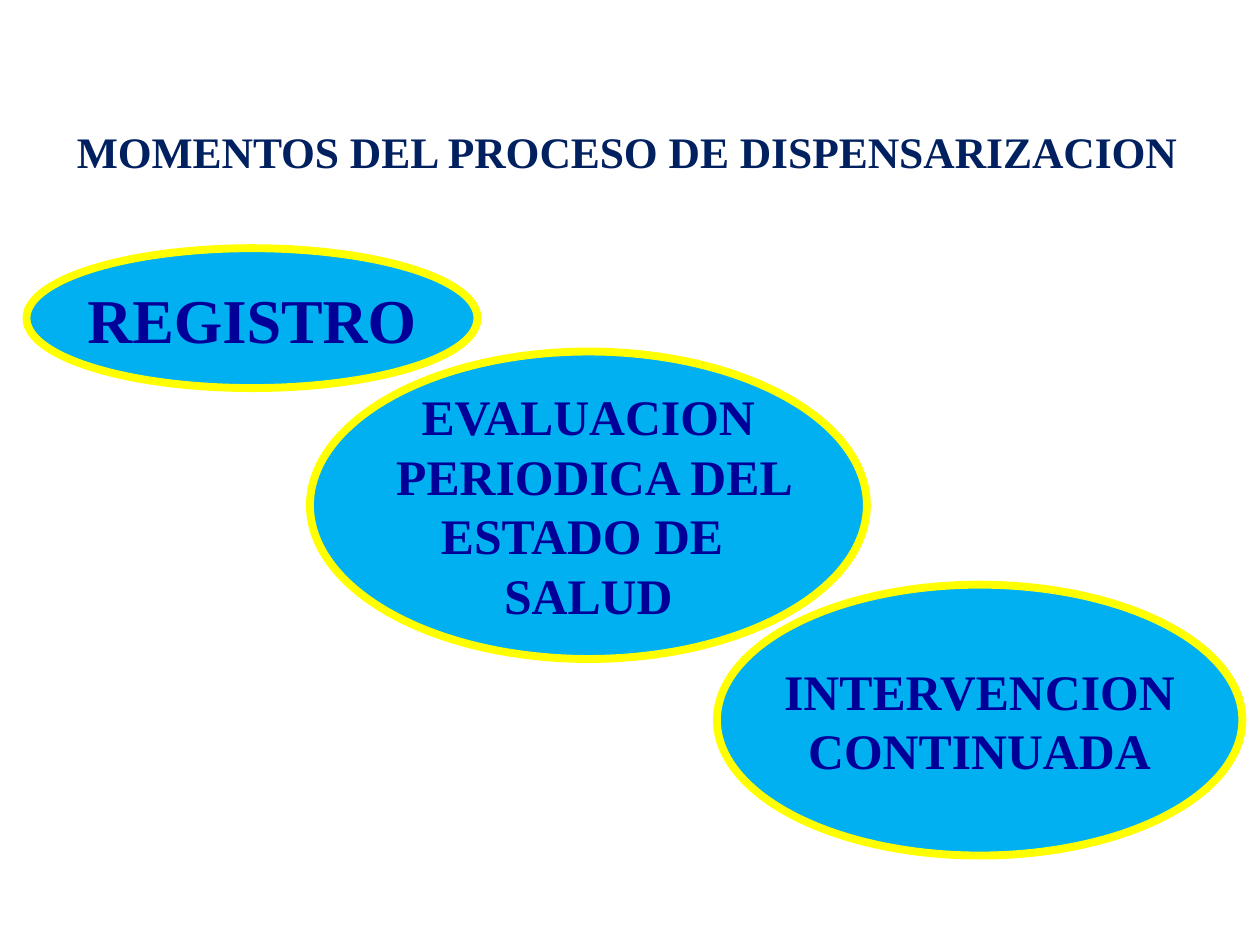
from pptx import Presentation
from pptx.dml.color import RGBColor
from pptx.enum.shapes import MSO_SHAPE
from pptx.enum.text import MSO_ANCHOR, PP_ALIGN
from pptx.util import Inches, Pt

ELLIPSE = MSO_SHAPE.OVAL
TOP, MIDDLE = MSO_ANCHOR.TOP, MSO_ANCHOR.MIDDLE
LEFT, CENTER = PP_ALIGN.LEFT, PP_ALIGN.CENTER

FONT = "Times New Roman"
COLORS = {"title": "002060", "moment": "000099", "fill": "00B0F0", "outline": "FFFF00"}
WIDTH, HEIGHT = 10, 7.5


def color(key):
    return RGBColor.from_string(COLORS[key])


def write_lines(frame, lines, size, color_key, align, anchor):
    """Fill a text frame with one unwrapped bold paragraph per line."""
    frame.word_wrap = False
    frame.vertical_anchor = anchor
    frame.margin_left = frame.margin_right = Inches(0.09)
    frame.margin_top = frame.margin_bottom = Inches(0.04)
    for index, line in enumerate(lines):
        paragraph = frame.add_paragraph() if index else frame.paragraphs[0]
        paragraph.alignment = align
        run = paragraph.add_run()
        run.text = line
        run.font.name = FONT
        run.font.size = Pt(size)
        run.font.bold = True
        run.font.color.rgb = color(color_key)


presentation = Presentation()
presentation.slide_width = Inches(WIDTH)
presentation.slide_height = Inches(HEIGHT)
slide = presentation.slides.add_slide(presentation.slide_layouts[5])

title = slide.shapes.title
title.left, title.top = Inches(0.52), Inches(0.95)
title.width, title.height = Inches(9.03), Inches(0.51)
write_lines(title.text_frame, ["MOMENTOS DEL PROCESO DE DISPENSARIZACION"],
            24.9, "title", LEFT, TOP)

# Each moment: left, top, width, height in inches, text size, lines
moments = [
    (0.21, 1.97, 3.58, 1.11, 35.6, ["REGISTRO"]),
    (2.46, 2.79, 4.42, 2.44, 28.4,
     ["EVALUACION", " PERIODICA DEL", "ESTADO DE ", "SALUD"]),
    (5.69, 4.64, 4.17, 2.15, 28.4, ["INTERVENCION", "CONTINUADA"]),
]
for left, top, width, height, size, lines in moments:
    moment = slide.shapes.add_shape(ELLIPSE, Inches(left), Inches(top),
                                    Inches(width), Inches(height))
    moment.shadow.inherit = False
    moment.fill.solid()
    moment.fill.fore_color.rgb = color("fill")
    moment.line.color.rgb = color("outline")
    moment.line.width = Pt(4.5)
    write_lines(moment.text_frame, lines, size, "moment", CENTER, MIDDLE)

presentation.save("out.pptx")
